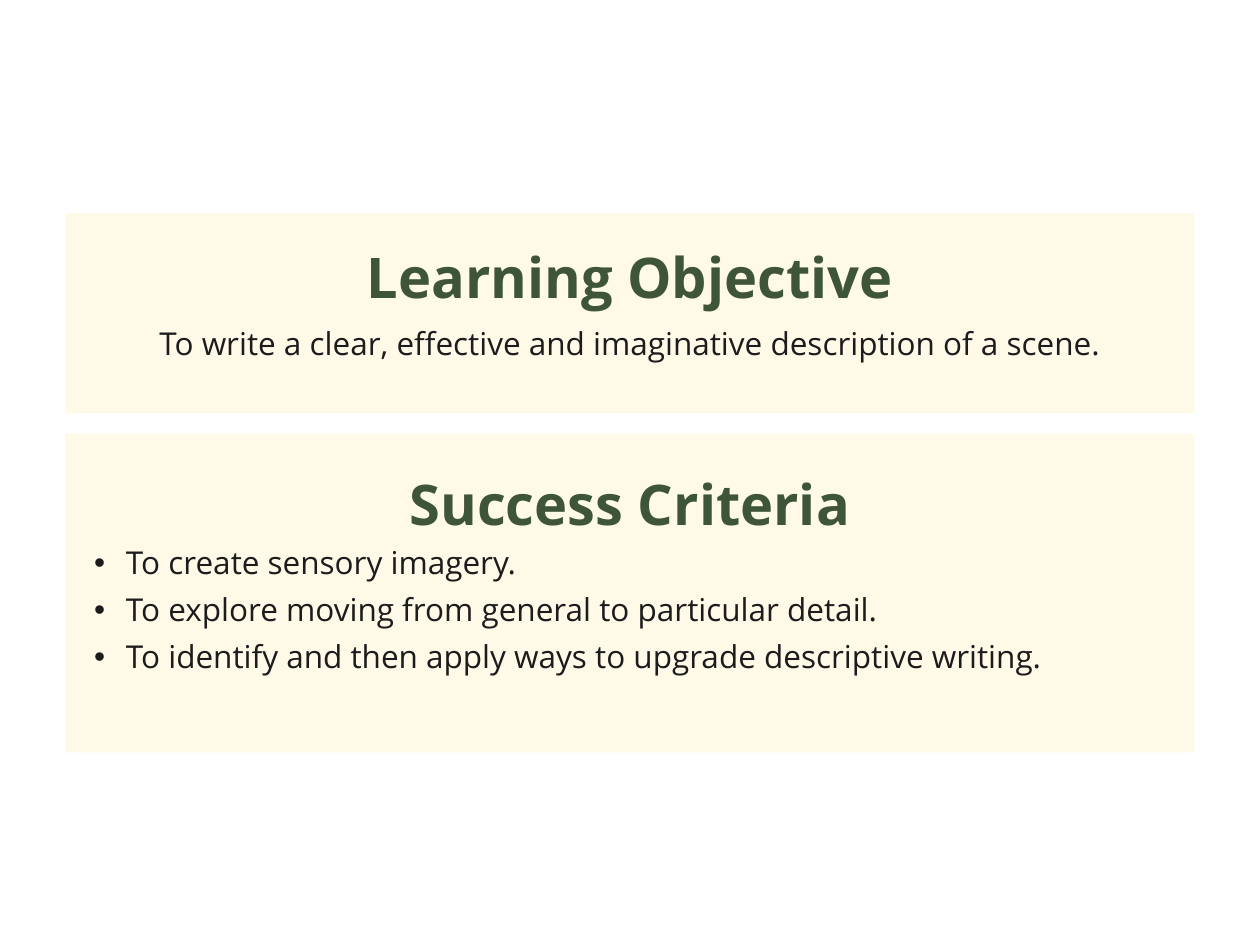
from lxml.etree import SubElement
from pptx import Presentation
from pptx.dml.color import RGBColor
from pptx.enum.shapes import MSO_SHAPE
from pptx.enum.text import MSO_ANCHOR, PP_ALIGN
from pptx.oxml.ns import qn
from pptx.util import Cm, Pt

CREAM = RGBColor(0xFF, 0xF9, 0xE7)
GREEN = RGBColor(0x3E, 0x55, 0x38)
BLACK = RGBColor(0x1C, 0x1C, 0x1C)
FONT = "Open Sans"
CARD_LEFT, CARD_WIDTH = Cm(1.32), Cm(22.76)


def add_bullet(paragraph):
    """Give a paragraph a hanging round bullet."""
    properties = paragraph._p.get_or_add_pPr()
    properties.set("marL", str(Cm(0.64)))
    properties.set("indent", str(-Cm(0.64)))
    SubElement(properties, qn("a:buFont"), typeface="Arial")
    SubElement(properties, qn("a:buChar"), char="•")


def add_text(slide, box, lines, size, color, bold=False, bulleted=False, inset=0):
    """Place lines of text in a box, centred unless bulleted."""
    shape = slide.shapes.add_textbox(*box)
    frame = shape.text_frame
    frame.word_wrap = True
    frame.vertical_anchor = MSO_ANCHOR.TOP
    frame.margin_left = frame.margin_right = frame.margin_bottom = 0
    frame.margin_top = inset
    frame.text = "\n".join(lines)
    for index, paragraph in enumerate(frame.paragraphs):
        paragraph.alignment = PP_ALIGN.LEFT if bulleted else PP_ALIGN.CENTER
        paragraph.line_spacing = 0.9
        paragraph.space_before = Pt(7.4 if index else 0)
        if bulleted:
            add_bullet(paragraph)
        for run in paragraph.runs:
            run.font.name = FONT
            run.font.size = Pt(size)
            run.font.bold = bold
            run.font.color.rgb = color


def add_card(slide, top, height, heading, heading_offset):
    """Draw a cream panel with its heading."""
    card = slide.shapes.add_shape(
        MSO_SHAPE.ROUNDED_RECTANGLE, CARD_LEFT, top, CARD_WIDTH, height
    )
    card.adjustments[0] = 0
    card.shadow.inherit = False
    card.line.fill.background()
    card.fill.solid()
    card.fill.fore_color.rgb = CREAM
    color = card._element.spPr.find(qn("a:solidFill")).find(qn("a:srgbClr"))
    SubElement(color, qn("a:alpha"), val="95000")
    box = (CARD_LEFT, top + heading_offset, CARD_WIDTH, Cm(1.93))
    add_text(slide, box, [heading], 32, GREEN, bold=True, inset=Cm(0.51))


def add_objective(slide, top, height):
    """Place the learning objective panel."""
    add_card(slide, top, height, "Learning Objective", Cm(0.25))
    add_text(
        slide,
        (CARD_LEFT, top + Cm(2.33), CARD_WIDTH, Cm(0.7)),
        ["To write a clear, effective and imaginative description of a scene."],
        18,
        BLACK,
    )


def add_criteria(slide, top, height):
    """Place the success criteria panel with its bullet list."""
    add_card(slide, top, height, "Success Criteria", Cm(0.36))
    margin = Cm(0.58)
    add_text(
        slide,
        (CARD_LEFT + margin, top + Cm(2.3), CARD_WIDTH - 2 * margin, Cm(2.8)),
        [
            "To create sensory imagery.",
            "To explore moving from general to particular detail.",
            "To identify and then apply ways to upgrade descriptive writing.",
        ],
        18,
        BLACK,
        bulleted=True,
    )


def main():
    """Build and save the slide."""
    presentation = Presentation()
    presentation.slide_width = Cm(25.4)
    presentation.slide_height = Cm(19.05)
    slide = presentation.slides.add_slide(presentation.slide_layouts[6])
    add_objective(slide, Cm(4.29), Cm(4.04))
    add_criteria(slide, Cm(8.74), Cm(6.43))
    presentation.save("out.pptx")


if __name__ == "__main__":
    main()
